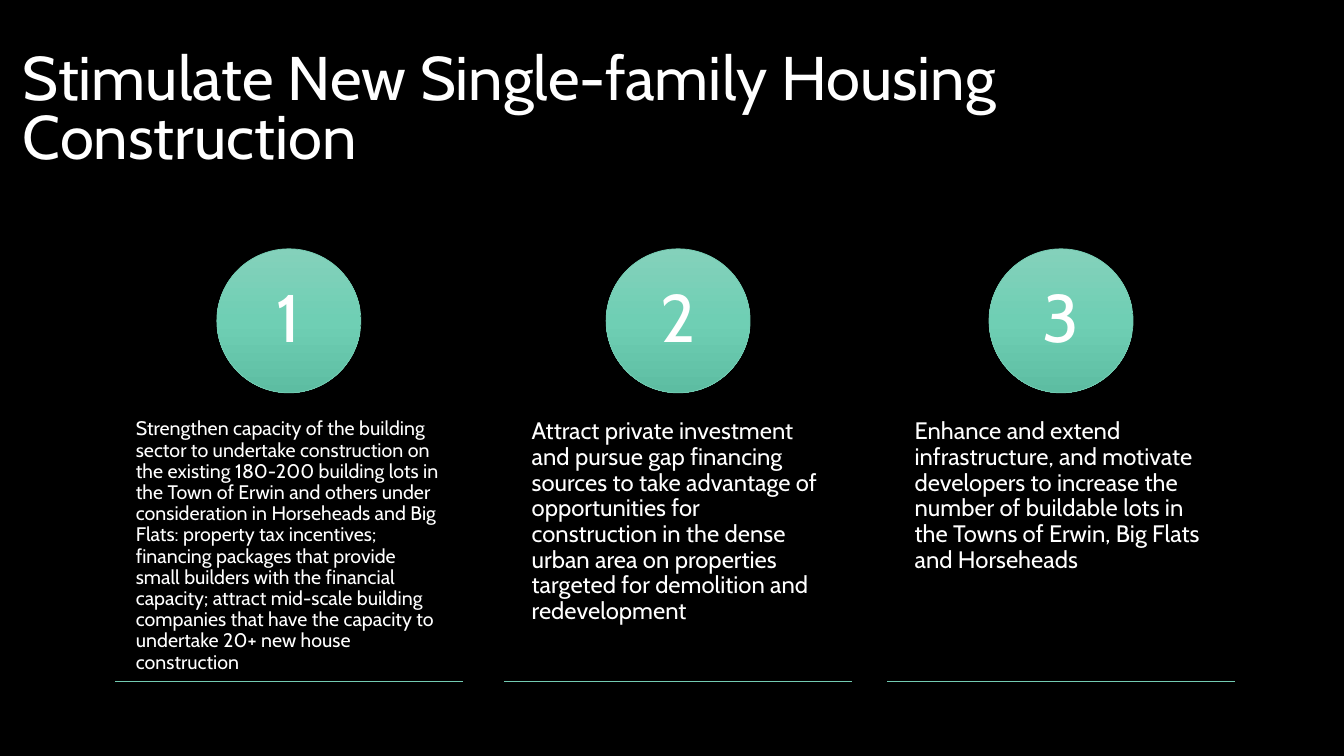
from copy import deepcopy
from dataclasses import dataclass

from lxml.etree import SubElement
from pptx import Presentation
from pptx.dml.color import RGBColor
from pptx.enum.shapes import MSO_CONNECTOR, MSO_SHAPE
from pptx.enum.text import MSO_ANCHOR, PP_ALIGN
from pptx.oxml.ns import qn
from pptx.shapes.autoshape import Shape
from pptx.slide import Slide
from pptx.text.text import TextFrame
from pptx.util import Cm, Pt

BLACK = RGBColor(0x00, 0x00, 0x00)
WHITE = RGBColor(0xFF, 0xFF, 0xFF)
MINT = RGBColor(0x73, 0xCB, 0xB2)
MINT_GRADIENT = (
    (0.0, RGBColor(0x84, 0xD1, 0xBB)),
    (0.5, RGBColor(0x6F, 0xCF, 0xB4)),
    (1.0, RGBColor(0x5D, 0xBD, 0xA2)),
)
FONT = "Cabin"

CIRCLE_TOP, CIRCLE_SIZE = 6.27, 3.63
BODY_TOP, BODY_HEIGHT = 9.65, 7.26
RULE_TOP, RULE_WIDTH = 17.17, 8.76


@dataclass(frozen=True)
class Strategy:
    center: float
    body_width: float
    body_size: float
    body: str


STRATEGIES = (
    Strategy(7.28, 9.09, 14,
             "Strengthen capacity of the building sector to undertake construction on "
             "the existing 180-200 building lots in the Town of Erwin and others under "
             "consideration in Horseheads and Big Flats: property tax incentives; "
             "financing packages that provide small builders with the financial "
             "capacity; attract mid-scale building companies that have the capacity to "
             "undertake 20+ new house construction"),
    Strategy(17.09, 8.76, 17,
             "Attract private investment and pursue gap financing sources to take "
             "advantage of opportunities for construction in the dense urban area on "
             "properties targeted for demolition and redevelopment"),
    Strategy(26.74, 8.76, 17,
             "Enhance and extend infrastructure, and motivate developers to increase "
             "the number of buildable lots in the Towns of Erwin, Big Flats and "
             "Horseheads"),
)


def write(frame: TextFrame, text: str, size: float, spacing: float,
          align: PP_ALIGN = PP_ALIGN.LEFT) -> None:
    frame.word_wrap = True
    paragraph = frame.paragraphs[0]
    paragraph.alignment = align
    paragraph.line_spacing = spacing
    run = paragraph.add_run()
    run.text = text
    run.font.name = FONT
    run.font.size = Pt(size)
    run.font.color.rgb = WHITE


def set_margins(frame: TextFrame, horizontal: float, vertical: float) -> None:
    frame.margin_left = frame.margin_right = Cm(horizontal)
    frame.margin_top = frame.margin_bottom = Cm(vertical)


def fill_with_mint_gradient(shape: Shape) -> None:
    shape.fill.gradient()
    shape.fill.gradient_angle = 270
    stop_list = shape._element.spPr.find(qn("a:gradFill")).find(qn("a:gsLst"))
    stop_list.insert(1, deepcopy(stop_list[0]))
    for stop, (position, color) in zip(shape.fill.gradient_stops, MINT_GRADIENT):
        stop.position = position
        stop.color.rgb = color


def add_title(slide: Slide, text: str) -> None:
    title = slide.shapes.add_textbox(Cm(0.33), Cm(0.99), Cm(33.54), Cm(3.68))
    title.text_frame.vertical_anchor = MSO_ANCHOR.MIDDLE
    write(title.text_frame, text, 44, 0.8)


def add_number_circle(slide: Slide, center: float, number: int) -> None:
    circle = slide.shapes.add_shape(
        MSO_SHAPE.OVAL, Cm(center - CIRCLE_SIZE / 2), Cm(CIRCLE_TOP),
        Cm(CIRCLE_SIZE), Cm(CIRCLE_SIZE))
    circle.shadow.inherit = False
    fill_with_mint_gradient(circle)
    circle.line.color.rgb = MINT
    circle.line.width = Pt(0.5)
    circle.text_frame.vertical_anchor = MSO_ANCHOR.MIDDLE
    set_margins(circle.text_frame, 0.28, 0.03)
    write(circle.text_frame, str(number), 48, 0.9, PP_ALIGN.CENTER)


def add_rule(slide: Slide, center: float) -> None:
    left, right = center - RULE_WIDTH / 2, center + RULE_WIDTH / 2
    rule = slide.shapes.add_connector(
        MSO_CONNECTOR.STRAIGHT, Cm(left), Cm(RULE_TOP), Cm(right), Cm(RULE_TOP))
    rule.line.color.rgb = MINT
    rule.line.width = Pt(0.5)
    SubElement(rule._element.spPr, qn("a:effectLst"))


def add_strategy(slide: Slide, number: int, strategy: Strategy) -> None:
    body = slide.shapes.add_textbox(
        Cm(strategy.center - strategy.body_width / 2), Cm(BODY_TOP),
        Cm(strategy.body_width), Cm(BODY_HEIGHT))
    set_margins(body.text_frame, 0.69, 0.91)
    write(body.text_frame, strategy.body, strategy.body_size, 0.9)
    add_number_circle(slide, strategy.center, number)
    add_rule(slide, strategy.center)


def main() -> None:
    presentation = Presentation()
    presentation.slide_width = Cm(33.87)
    presentation.slide_height = Cm(19.05)
    slide = presentation.slides.add_slide(presentation.slide_layouts[6])
    slide.background.fill.solid()
    slide.background.fill.fore_color.rgb = BLACK

    add_title(slide, "Stimulate New Single-family Housing Construction")
    for number, strategy in enumerate(STRATEGIES, start=1):
        add_strategy(slide, number, strategy)
    presentation.save("out.pptx")


if __name__ == "__main__":
    main()
